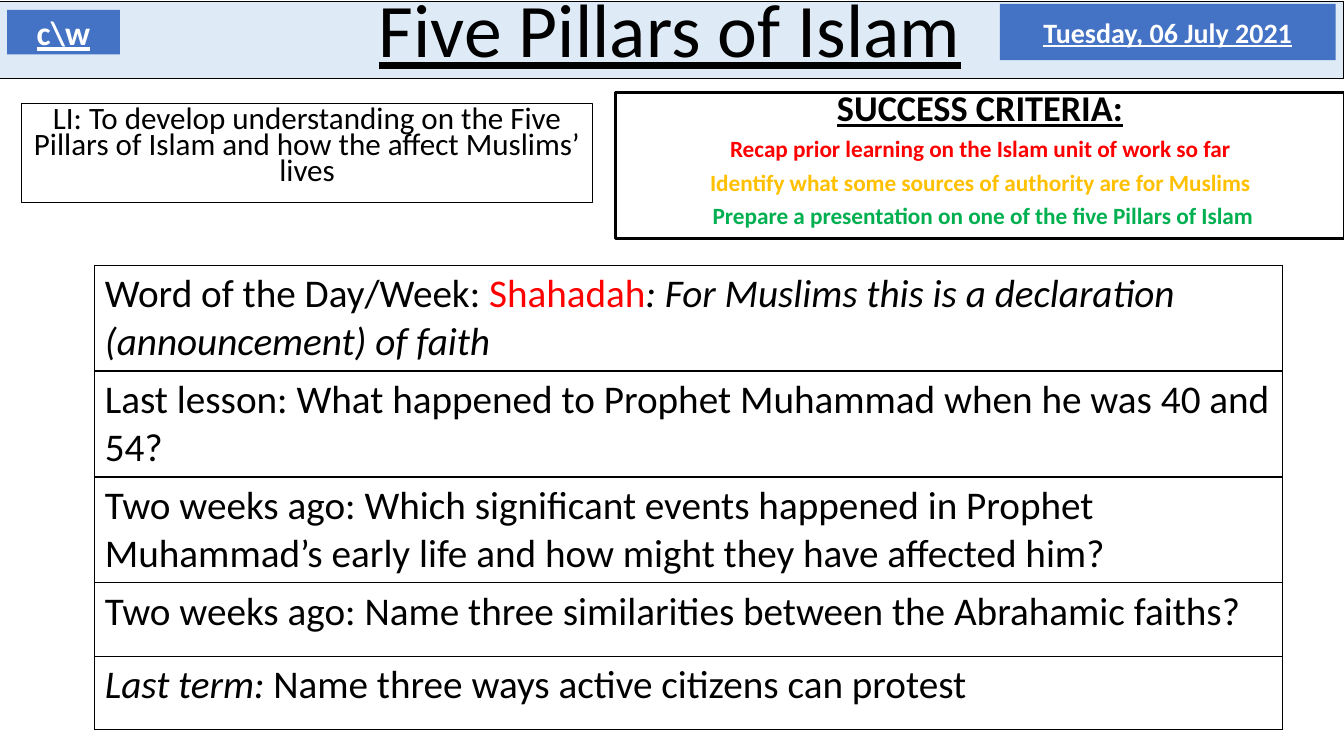
from dataclasses import dataclass, field

from lxml.etree import SubElement
from pptx import Presentation
from pptx.dml.color import RGBColor
from pptx.enum.shapes import MSO_SHAPE
from pptx.enum.text import MSO_ANCHOR, PP_ALIGN
from pptx.oxml.ns import qn
from pptx.util import Cm, Pt

BLACK = RGBColor(0x00, 0x00, 0x00)
WHITE = RGBColor(0xFF, 0xFF, 0xFF)
PALE = RGBColor(0xDE, 0xEB, 0xF7)
BLUE = RGBColor(0x44, 0x72, 0xC4)
RED = RGBColor(0xFF, 0x00, 0x00)
AMBER = RGBColor(0xFF, 0xC0, 0x00)
GREEN = RGBColor(0x00, 0xB0, 0x50)


@dataclass
class Run:
    text: str
    size: float
    color: RGBColor = BLACK
    style: dict = field(default_factory=dict)


@dataclass
class Box:
    left: float
    top: float
    width: float
    height: float
    fill: RGBColor
    lines: list[Run]
    border: float = 0
    anchor: MSO_ANCHOR = MSO_ANCHOR.TOP
    layout: dict = field(default_factory=dict)


UNDER = {"underline": True}
BOLD = {"bold": True}
HEAD = BOLD | UNDER
SLANT = {"italic": True}
TIGHT = {"line_spacing": 0.7, "space_before": Pt(10)}
ASK = 28

BOXES = [
    # Title band
    Box(-0.1, 0.03, 33.96, 1.96, PALE,
        [Run("Five Pillars of Islam", 54, style=UNDER)],
        0.75, MSO_ANCHOR.BOTTOM, {"line_spacing": 0.9}),
    # Learning intention
    Box(0.55, 2.61, 14.38, 2.49, WHITE,
        [Run("LI: To develop understanding on the Five Pillars of Islam "
             "and how the affect Muslims’ lives", 22.2)],
        0.75, layout=TIGHT),
    # Date and classwork labels
    Box(25.2, 0.1, 8.46, 1.42, BLUE,
        [Run("Tuesday, 06 July 2021", 20, WHITE, HEAD)],
        anchor=MSO_ANCHOR.MIDDLE),
    Box(0.18, 0.25, 2.84, 1.12, BLUE,
        [Run(r"c\w", 24, WHITE, HEAD)], anchor=MSO_ANCHOR.MIDDLE),
    # Success criteria
    Box(15.52, 2.33, 18.36, 3.69, WHITE,
        [Run("SUCCESS CRITERIA:", 25.9, style=HEAD),
         Run("Recap prior learning on the Islam unit of work so far",
             16.6, RED, BOLD),
         Run("Identify what some sources of authority are for Muslims",
             16.6, AMBER, BOLD),
         Run(" Prepare a presentation on one of the five Pillars of Islam",
             16.6, GREEN, BOLD)],
        2.25, layout=TIGHT),
]

TASKS = [
    [Run("Word of the Day/Week: ", ASK), Run("Shahadah", ASK, RED),
     Run(": For Muslims this is a declaration (announcement) of faith",
         ASK, style=SLANT)],
    [Run("Last lesson: What happened to Prophet Muhammad when he was "
         "40 and 54?", ASK)],
    [Run("Two weeks ago: Which significant events happened in Prophet "
         "Muhammad’s early life and how might they have affected him?", ASK)],
    [Run("Two weeks ago: Name three similarities between the Abrahamic "
         "faiths?", ASK)],
    [Run("Last term: ", ASK, style=SLANT),
     Run("Name three ways active citizens can protest", ASK)],
]


def add_run(para, item: Run) -> None:
    run = para.add_run()
    run.text = item.text
    look = {"name": "Calibri", "size": Pt(item.size)} | item.style
    for key, value in look.items():
        setattr(run.font, key, value)
    run.font.color.rgb = item.color


def add_box(slide, box: Box) -> None:
    shape = slide.shapes.add_shape(
        MSO_SHAPE.RECTANGLE, Cm(box.left), Cm(box.top),
        Cm(box.width), Cm(box.height))
    shape.shadow.inherit = False
    shape.fill.solid()
    shape.fill.fore_color.rgb = box.fill
    if box.border:
        shape.line.color.rgb = BLACK
        shape.line.width = Pt(box.border)
    else:
        shape.line.fill.background()
    frame = shape.text_frame
    frame.word_wrap = True
    frame.vertical_anchor = box.anchor
    for i, item in enumerate(box.lines):
        para = frame.add_paragraph() if i else frame.paragraphs[0]
        for key, value in ({"alignment": PP_ALIGN.CENTER} | box.layout).items():
            setattr(para, key, value)
        add_run(para, item)


def add_edges(cell) -> None:
    props = cell._tc.get_or_add_tcPr()
    for i, side in enumerate(("lnL", "lnR", "lnT", "lnB")):
        edge = props.makeelement(qn(f"a:{side}"), {"w": str(Pt(1))})
        fill = SubElement(edge, qn("a:solidFill"))
        SubElement(fill, qn("a:srgbClr"), val=str(BLACK))
        props.insert(i, edge)


def add_tasks(slide, tasks: list[list[Run]]) -> None:
    high = Cm(1.85)
    table = slide.shapes.add_table(
        len(tasks), 1, Cm(2.39), Cm(6.68), Cm(29.92), high * len(tasks)).table
    for key in ("first_row", "horz_banding"):
        setattr(table, key, False)
    for row, runs in zip(table.rows, tasks):
        row.height = high
        cell = row.cells[0]
        cell.fill.solid()
        cell.fill.fore_color.rgb = WHITE
        add_edges(cell)
        for item in runs:
            add_run(cell.text_frame.paragraphs[0], item)


def main() -> None:
    deck = Presentation()
    deck.slide_width, deck.slide_height = Cm(33.87), Cm(19.05)
    slide = deck.slides.add_slide(deck.slide_layouts[6])
    for box in BOXES:
        add_box(slide, box)
    add_tasks(slide, TASKS)
    deck.save("out.pptx")


if __name__ == "__main__":
    main()
